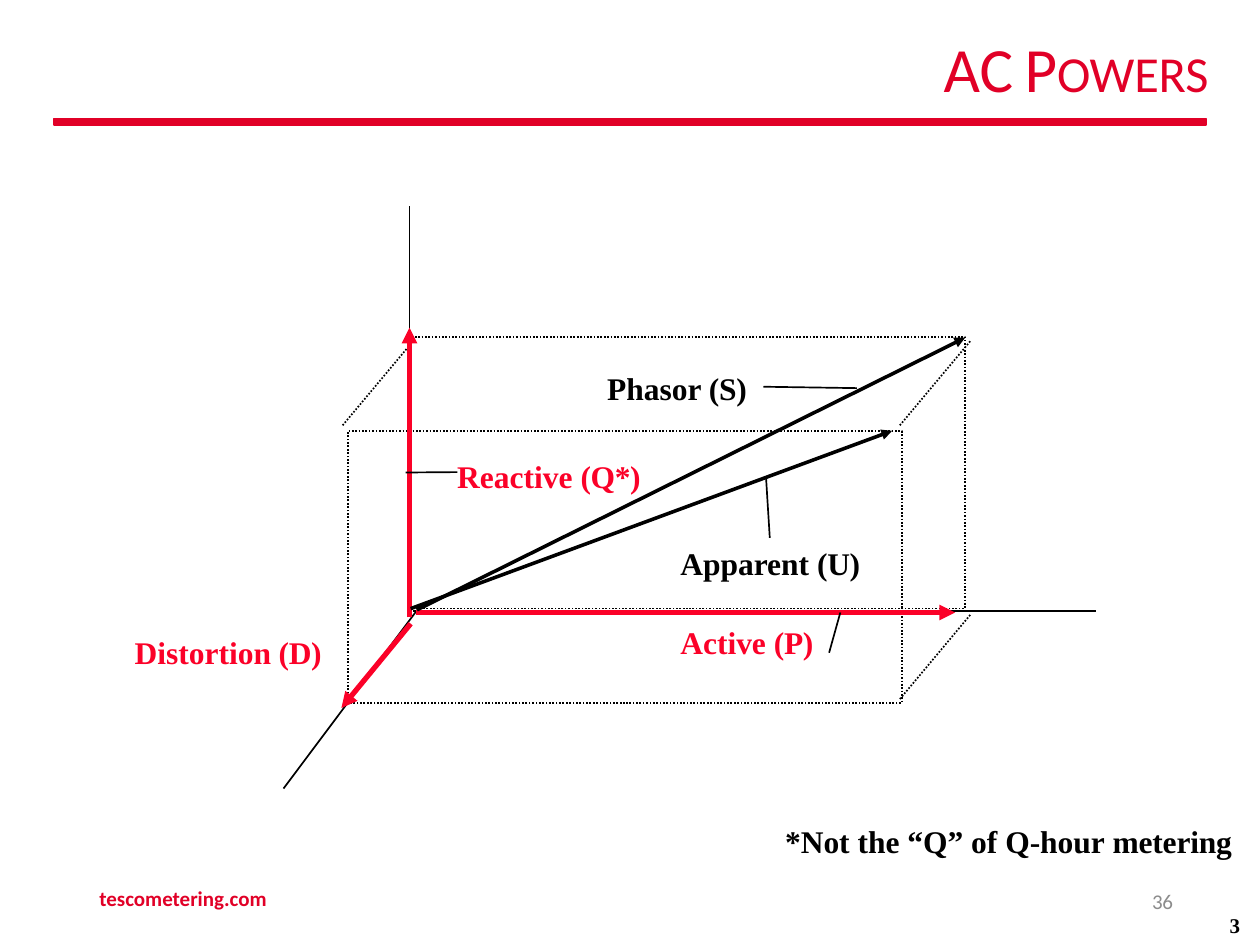
"""Build the AC powers slide with its three-axis power diagram."""
from lxml.etree import SubElement
from pptx import Presentation
from pptx.dml.color import RGBColor as RGB
from pptx.enum.dml import MSO_LINE as DASH
from pptx.enum.shapes import MSO_CONNECTOR as CONN, MSO_SHAPE as SHAPE
from pptx.enum.text import MSO_ANCHOR as ANCHOR, PP_ALIGN as ALIGN
from pptx.oxml.ns import qn
from pptx.util import Pt

C = {"brand": "E10027", "red": "FB0128", "black": "000000", "gray": "8C8C8C"}
SERIF, SANS = "Times New Roman", "Calibri"


def add_text(box, paras, size=18, font=SERIF, bold=True, align=ALIGN.LEFT,
             anchor=ANCHOR.TOP, margins=(0, 2, 0, 0), gap=0, cap=None):
    tf = s.shapes.add_textbox(*map(Pt, box)).text_frame
    tf.word_wrap = True
    tf.vertical_anchor = anchor
    tf.margin_left, tf.margin_top, tf.margin_right, tf.margin_bottom = map(Pt, margins)
    for i, (color, indent, runs) in enumerate(paras):
        p = tf.add_paragraph() if i else tf.paragraphs[0]
        p.alignment = align
        if indent:
            p._p.get_or_add_pPr().set("marL", str(Pt(indent)))
        if i:
            p.space_before = Pt(gap)
        for text, spacing in runs:
            r = p.add_run()
            r.text = text
            r.font.name, r.font.size, r.font.bold = font, Pt(size), bold
            r.font.color.rgb = RGB.from_string(C[color])
            rPr = r._r.get_or_add_rPr()
            if spacing:
                rPr.set("spc", str(spacing))
            if cap:
                rPr.set("cap", cap)


def add_line(x1, y1, x2, y2, color="black", width=0.96, dash=None, arrow=False):
    c = s.shapes.add_connector(CONN.STRAIGHT, *map(Pt, (x1, y1, x2, y2)))
    c.line.color.rgb = RGB.from_string(C[color])
    c.line.width = Pt(width)
    if dash:
        c.line.dash_style = dash
    if arrow:
        SubElement(c.line._get_or_add_ln(), qn("a:tailEnd"), type="triangle")
    SubElement(c._element.spPr, qn("a:effectLst"))


prs = Presentation()
prs.slide_width, prs.slide_height = Pt(720), Pt(540)
s = prs.slides.add_slide(prs.slide_layouts[6])

bar = s.shapes.add_shape(SHAPE.RECTANGLE, Pt(31), Pt(67.7), Pt(658), Pt(3.6))
bar.shadow.inherit = False
bar.fill.solid()
bar.fill.fore_color.rgb = bar.line.color.rgb = RGB.from_string(C["brand"])
bar.line.width = Pt(1)

add_text((122.4, 10.8, 567.4, 53.3), [("brand", 0, [("AC ", 0), ("Powers", -10)])],
         size=36, font=SANS, bold=False, align=ALIGN.RIGHT, anchor=ANCHOR.MIDDLE, cap="small")
add_text((49.7, 499, 243.4, 28.8), [("brand", 0, [("tescometering.com", 0)])],
         size=12, font=SANS, anchor=ANCHOR.MIDDLE, margins=(7.2, 3.6, 7.2, 3.6))
add_text((508.3, 500.4, 162, 28.8), [("gray", 0, [("36", -20)])], size=12, font=SANS,
         bold=False, align=ALIGN.RIGHT, anchor=ANCHOR.MIDDLE, margins=(0, 0, 0, 0))

for x, y in [(234.7, 192.4), (198.7, 246.4)]:
    face = s.shapes.add_shape(SHAPE.RECTANGLE, Pt(x), Pt(y), Pt(316.8), Pt(155.3))
    face.shadow.inherit = False
    face.fill.background()
    face.line.color.rgb = RGB.from_string(C["black"])
    face.line.width = Pt(0.96)
    face.line.dash_style = DASH.ROUND_DOT

for axis in [(234, 350, 234, 118), (236, 349, 626.4, 349), (239, 347.8, 162, 450.6)]:
    add_line(*axis)
for x, y in [(236, 195), (554.4, 195), (554.4, 351.4)]:
    add_line(x, y, x - 40.3, y + 48.2, dash=DASH.ROUND_DOT)

for vector in [(234, 352.8, 234, 187.2), (237.6, 350, 545.8, 350), (234.7, 356.4, 195.1, 404.6)]:
    add_line(*vector, color="red", width=3, arrow=True)
for vector in [(238.3, 348.5, 551.5, 193), (234.7, 347.8, 509.8, 246.2)]:
    add_line(*vector, width=2.04, arrow=True)

add_text((260.6, 208.8, 232.6, 119.5),
         [("black", 86.4, [("Phasor ", 0), ("(S)", -20)]),
          ("red", 0.7, [("Reactive ", 0), ("(Q*)", -20)]),
          ("black", 128.2, [("Apparent ", 0), ("(U)", -20)])], gap=28.5)
for box, color, runs in [
        ((77, 360, 109, 23.8), "red", [("Distortion", 0), (" (D)", -20)]),
        ((388.8, 354.2, 79, 23.8), "red", [("Active ", 0), ("(P)", -20)]),
        ((448.6, 468, 259, 23.8), "black", [("*Not the “Q” of Q-hour ", 0), ("metering", -10)])]:
    add_text(box, [(color, 0, runs)])

for leader in [(436.3, 221, 489.6, 221.8), (439.9, 307.4, 437.8, 273.6),
               (261.4, 269.8, 231.8, 270), (473.8, 373, 480.2, 350)]:
    add_line(*leader)

add_text((702.7, 521.3, 8, 15.1), [("black", 0, [("3", 0)])], size=12, margins=(0, 0, 0, 0))

prs.save("out.pptx")
